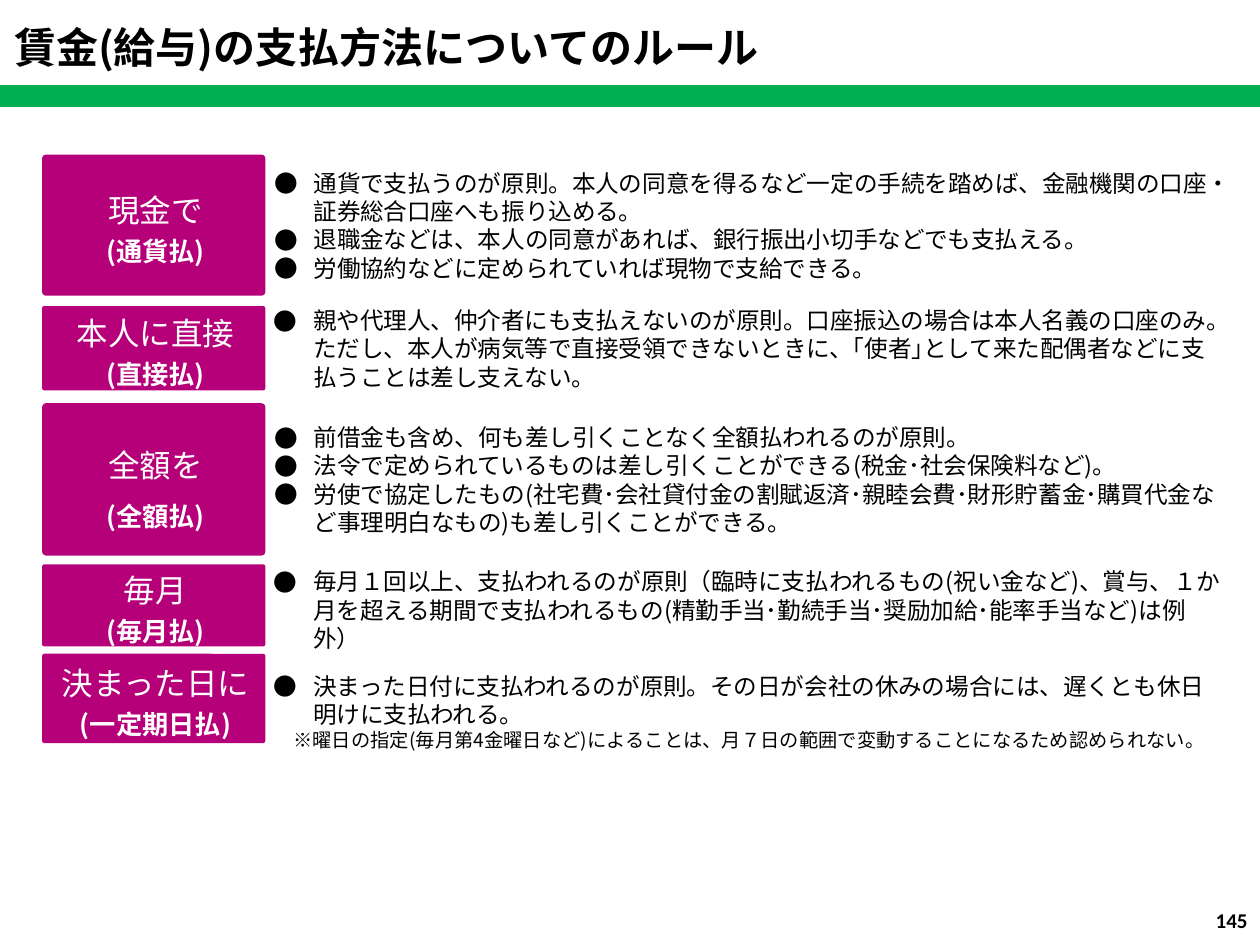
from lxml.etree import SubElement
from pptx import Presentation
from pptx.dml.color import RGBColor
from pptx.enum.shapes import MSO_SHAPE
from pptx.enum.text import MSO_ANCHOR, PP_ALIGN
from pptx.oxml.ns import qn
from pptx.util import Cm, Pt

COLORS = {"label": "B6007A", "bar": "00B050", "white": "FFFFFF", "text": "000000"}
FONT = "Noto Sans CJK JP"


class SlideBuilder:
    def __init__(self, prs):
        self.s = prs.slides.add_slide(prs.slide_layouts[5])

    def color(self, name):
        return RGBColor.from_string(COLORS[name])

    def run(self, p, text, size, color="text", bold=False, font=FONT):
        r = p.add_run()
        r.text = text
        r.font.size = Pt(size)
        r.font.bold = bold
        r.font.name = font
        r.font.color.rgb = self.color(color)
        SubElement(r.font._element, qn("a:ea"), typeface=font)

    def paragraph(self, tf, align=PP_ALIGN.LEFT):
        p = tf.paragraphs[0]
        if p.runs:
            p = tf.add_paragraph()
        p.alignment = align
        return p

    def indent(self, p, left, first=0):
        pPr = p._p.get_or_add_pPr()
        pPr.set("marL", str(Cm(left)))
        pPr.set("indent", str(Cm(first)))
        return pPr

    def title(self, text):
        sp = self.s.shapes.title
        sp.left, sp.top, sp.width, sp.height = Cm(0.03), Cm(0.3), Cm(22.5), Cm(1.28)
        tf = sp.text_frame
        tf.word_wrap = True
        tf.vertical_anchor = MSO_ANCHOR.TOP
        self.run(self.paragraph(tf), text, 24, bold=True)

    def shape(self, kind, left, top, width, height, color):
        sp = self.s.shapes.add_shape(kind, Cm(left), Cm(top), Cm(width), Cm(height))
        sp.shadow.inherit = False
        sp.fill.solid()
        sp.fill.fore_color.rgb = self.color(color)
        sp.line.fill.background()
        return sp

    def bar(self, top, height):
        sp = self.shape(MSO_SHAPE.RECTANGLE, 0, top, 25.4, height, "bar")
        sp.line.color.rgb = self.color("bar")
        sp.line.width = Pt(2)

    def card(self, left, top, width, height, color):
        sp = self.shape(MSO_SHAPE.ROUNDED_RECTANGLE, left, top, width, height, color)
        sp.adjustments[0] = 0.026
        tf = sp.text_frame
        tf.word_wrap = True
        tf.vertical_anchor = MSO_ANCHOR.MIDDLE
        tf.margin_left = Cm(0.15)
        tf.margin_top = tf.margin_right = tf.margin_bottom = Cm(0.08)
        return tf

    def label(self, top, height, name, term, spacing):
        tf = self.card(0.85, top, 4.5, height, "label")
        for text, size, bold in ((name, 18, False), (term, 15, True)):
            p = self.paragraph(tf, PP_ALIGN.CENTER)
            p.line_spacing = spacing
            self.run(p, text, size, "white", bold)

    def rules(self, top, width, height, items, note=None):
        tf = self.card(5.36, top, width, height, "white")
        for text in items:
            p = self.paragraph(tf)
            pPr = self.indent(p, 0.79, -0.79)
            SubElement(pPr, qn("a:buFont"), typeface=FONT)
            SubElement(pPr, qn("a:buChar"), char="●")
            self.run(p, text, 13.5)
        if note:
            p = self.paragraph(tf)
            self.indent(p, 0.39)
            self.run(p, note, 11)

    def page_number(self, text):
        sp = self.s.shapes.add_textbox(Cm(17.5), Cm(18.03), Cm(7.9), Cm(1.02))
        tf = sp.text_frame
        tf.word_wrap = True
        tf.vertical_anchor = MSO_ANCHOR.MIDDLE
        self.run(self.paragraph(tf, PP_ALIGN.RIGHT), text, 12, bold=True, font="Calibri")


ROWS = [
    {
        "label": (3.12, 2.84, "現金で", "(通貨払)", 1.2),
        "rules": (3.12, 19.81, 2.84, [
            "通貨で支払うのが原則。本人の同意を得るなど一定の手続を踏めば、金融機関の口座・証券総合口座へも振り込める。",
            "退職金などは、本人の同意があれば、銀行振出小切手などでも支払える。",
            "労働協約などに定められていれば現物で支給できる。",
        ]),
    },
    {
        "label": (6.17, 1.7, "本人に直接", "(直接払)", 1.2),
        "rules": (6.15, 19.35, 1.75, [
            "親や代理人、仲介者にも支払えないのが原則。口座振込の場合は本人名義の口座のみ。ただし、本人が病気等で直接受領できないときに、｢使者｣として来た配偶者などに支払うことは差し支えない。",
        ]),
    },
    {
        "label": (8.13, 3.07, "全額を", "(全額払)", 1.5),
        "rules": (8.13, 19.35, 3.07, [
            "前借金も含め、何も差し引くことなく全額払われるのが原則。",
            "法令で定められているものは差し引くことができる(税金･社会保険料など)。",
            "労使で協定したもの(社宅費･会社貸付金の割賦返済･親睦会費･財形貯蓄金･購買代金など事理明白なもの)も差し引くことができる。",
        ]),
    },
    {
        "label": (11.38, 1.65, "毎月", "(毎月払)", 1.2),
        "rules": (11.33, 19.35, 1.93, [
            "毎月１回以上、支払われるのが原則（臨時に支払われるもの(祝い金など)、賞与、１か月を超える期間で支払われるもの(精勤手当･勤続手当･奨励加給･能率手当など)は例外）",
        ]),
    },
    {
        "label": (13.18, 1.8, "決まった日に", "(一定期日払)", 1.2),
        "rules": (13.44, 19.35, 1.8, [
            "決まった日付に支払われるのが原則。その日が会社の休みの場合には、遅くとも休日明けに支払われる。",
        ], "※曜日の指定(毎月第4金曜日など)によることは、月７日の範囲で変動することになるため認められない。"),
    },
]


def main():
    prs = Presentation()
    prs.slide_width, prs.slide_height = Cm(25.4), Cm(19.05)
    slide = SlideBuilder(prs)
    slide.title("賃金(給与)の支払方法についてのルール")
    slide.bar(1.75, 0.38)
    for row in ROWS:
        slide.rules(*row["rules"])
    for row in ROWS:
        slide.label(*row["label"])
    slide.page_number("145")
    prs.save("out.pptx")


if __name__ == "__main__":
    main()
